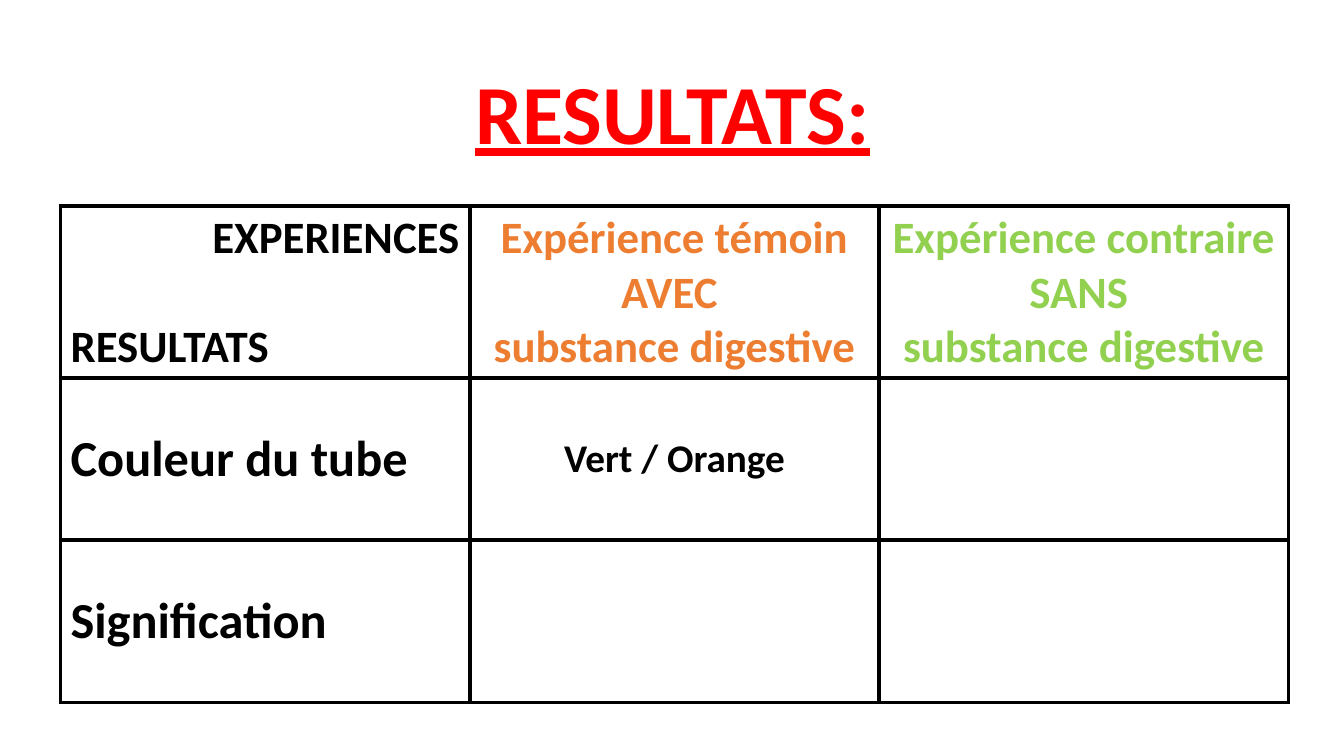
"""Build the results slide: a title and a table comparing two experiments."""
from dataclasses import dataclass

from lxml import etree
from pptx import Presentation
from pptx.dml.color import RGBColor
from pptx.enum.text import MSO_ANCHOR, PP_ALIGN
from pptx.oxml.ns import qn
from pptx.util import Inches, Pt

LEFT, CENTER, RIGHT = PP_ALIGN.LEFT, PP_ALIGN.CENTER, PP_ALIGN.RIGHT
TOP, MIDDLE, BOTTOM = MSO_ANCHOR.TOP, MSO_ANCHOR.MIDDLE, MSO_ANCHOR.BOTTOM


@dataclass(frozen=True)
class Theme:
    font: str = "Calibri"
    red: str = "FF0000"
    black: str = "000000"
    orange: str = "ED7D31"
    green: str = "92D050"
    white: str = "FFFFFF"
    title: int = 60
    label: int = 36
    header: int = 32
    answer: int = 28
    border: int = 3


theme = Theme()


def add_text(p, text, size, color, align):
    p.alignment = align
    r = p.add_run()
    r.text = text
    r.font.name = theme.font
    r.font.size = Pt(size)
    r.font.bold = True
    r.font.color.rgb = RGBColor.from_string(color)
    return r


def add_borders(cell):
    tc_pr = cell._tc.get_or_add_tcPr()
    for i, side in enumerate(("lnL", "lnR", "lnT", "lnB")):
        ln = etree.Element(qn(f"a:{side}"), w=str(Pt(theme.border)))
        fill = etree.SubElement(ln, qn("a:solidFill"))
        etree.SubElement(fill, qn("a:srgbClr"), val=theme.black)
        tc_pr.insert(i, ln)


prs = Presentation()
prs.slide_width, prs.slide_height = Inches(13.33), Inches(7.5)
s = prs.slides.add_slide(prs.slide_layouts[6])

title = s.shapes.add_textbox(Inches(1.67), Inches(0.62), Inches(10), Inches(1.04))
tf = title.text_frame
tf.word_wrap = True
tf.vertical_anchor = BOTTOM
p = tf.paragraphs[0]
p.line_spacing = 0.9
add_text(p, "RESULTATS:", theme.title, theme.red, CENTER).font.underline = True

frame = s.shapes.add_table(3, 3, Inches(0.6), Inches(2.04), Inches(12.18), Inches(4.83))
table = frame.table
table.first_row = table.horz_banding = False
for column in table.columns:
    column.width = Inches(4.06)
for row in table.rows:
    row.height = Inches(1.61)

contents = {
    (0, 0): (["EXPERIENCES", "RESULTATS"], theme.header, theme.black, LEFT),
    (0, 1): (["Expérience témoin", "AVEC ", "substance digestive"],
             theme.header, theme.orange, CENTER),
    (0, 2): (["Expérience contraire", "SANS ", "substance digestive"],
             theme.header, theme.green, CENTER),
    (1, 0): (["Couleur du tube"], theme.label, theme.black, LEFT),
    (1, 1): (["Vert / Orange"], theme.answer, theme.black, CENTER),
    (2, 0): (["Signification"], theme.label, theme.black, LEFT),
}
for row in range(3):
    for col in range(3):
        cell = table.cell(row, col)
        cell.fill.solid()
        cell.fill.fore_color.rgb = RGBColor.from_string(theme.white)
        cell.vertical_anchor = MIDDLE if row else TOP
        add_borders(cell)
        if (row, col) in contents:
            lines, size, color, align = contents[row, col]
            tf = cell.text_frame
            for i, line in enumerate(lines):
                p = tf.add_paragraph() if i else tf.paragraphs[0]
                add_text(p, line, size, color, align)

experiences, results = table.cell(0, 0).text_frame.paragraphs
experiences.alignment = RIGHT
results.space_before = Pt(39)

prs.save("out.pptx")
